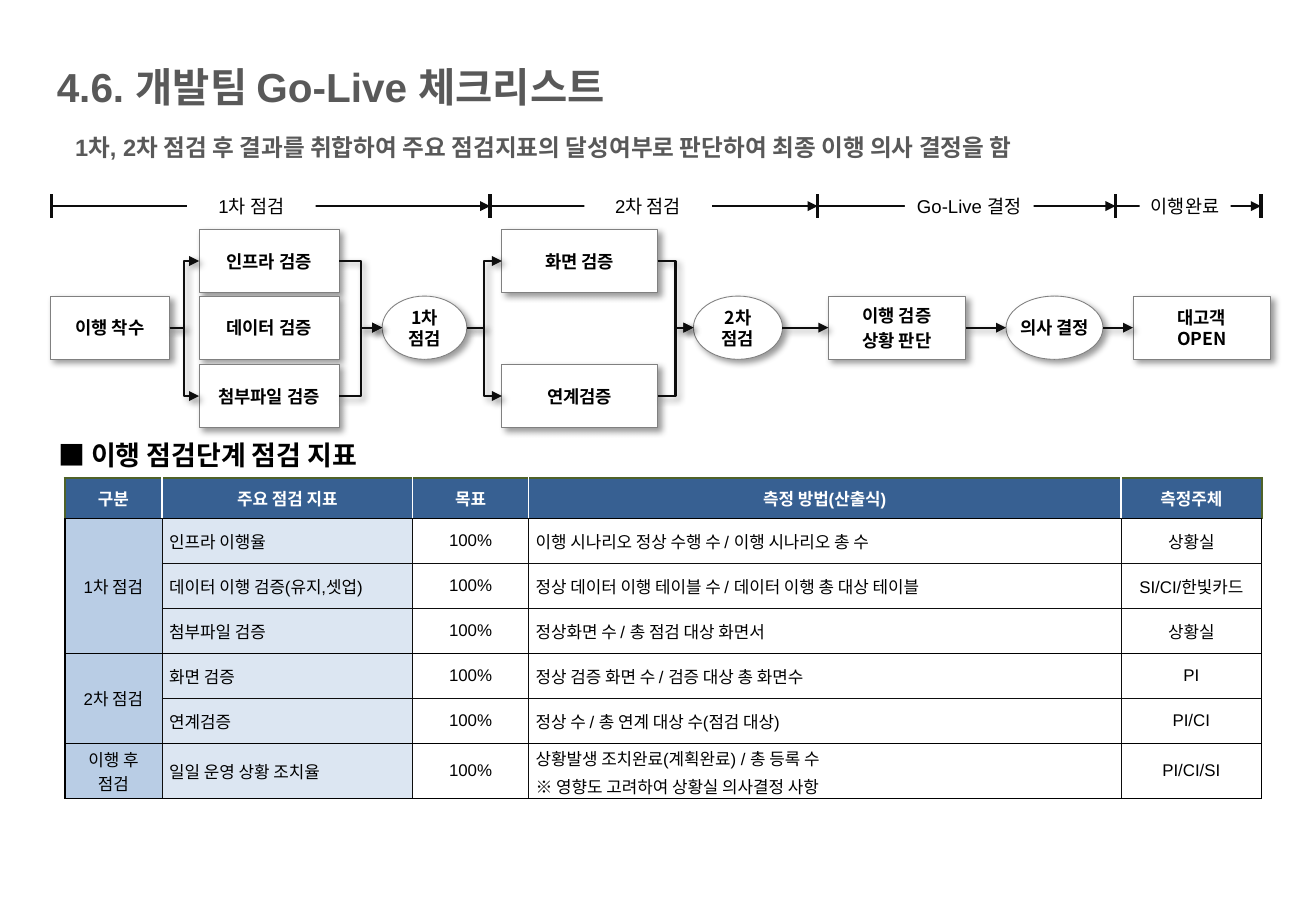
from lxml import etree
from pptx import Presentation
from pptx.dml.color import RGBColor
from pptx.enum.shapes import MSO_CONNECTOR, MSO_SHAPE
from pptx.enum.text import MSO_ANCHOR, PP_ALIGN
from pptx.oxml.ns import qn
from pptx.util import Pt

RECT, OVAL = MSO_SHAPE.RECTANGLE, MSO_SHAPE.OVAL
STRAIGHT, ELBOW = MSO_CONNECTOR.STRAIGHT, MSO_CONNECTOR.ELBOW
LEFT, CENTER, MIDDLE = PP_ALIGN.LEFT, PP_ALIGN.CENTER, MSO_ANCHOR.MIDDLE
LATIN, KOREAN = "Arial", "Noto Sans CJK KR"
BLACK, INK, WHITE, GRAY = "000000", "0D0D0D", "FFFFFF", "595959"

# Content: text, left, top, width, height, size, colour, line spacing
HEADINGS = [
    ("4.6. 개발팀 Go-Live 체크리스트", 26.6, 33.5, 670, 36, 24, GRAY, 1),
    ("1차, 2차 점검 후 결과를 취합하여 주요 점검지표의 달성여부로 판단하여 최종 이행 의사 결정을 함",
     37.4, 75, 711, 24.5, 14, GRAY, 1),
    ("■ 이행 점검단계 점검 지표", 27.4, 252.7, 737, 30, 16, BLACK, 1.2),
]
TICKS = [30.6, 290.5, 484.6, 661.2, 747.4]
PHASES = [("1차 점검", 110.9, 76.3), ("2차 점검", 346.3, 75.6),
          ("Go-Live 결정", 536.4, 76.3), ("이행완료", 675.4, 54)]
AXIS_Y = 122.2

# Flow steps: key -> text, shape, left, width, row
ROW_TOPS, STEP_H = [136, 175.5, 216], 37.5
STEPS = {
    "start": ("이행 착수", RECT, 29.8, 70.8, 1),
    "infra": ("인프라 검증", RECT, 118, 83, 0),
    "data": ("데이터 검증", RECT, 118, 83, 1),
    "files": ("첨부파일 검증", RECT, 118, 83, 2),
    "check1": ("1차\v점검", OVAL, 226.5, 50.2, 1),
    "screen": ("화면 검증", RECT, 297.5, 92.3, 0),
    "link": ("연계검증", RECT, 297.5, 92.3, 2),
    "check2": ("2차\v점검", OVAL, 411, 52.8, 1),
    "review": ("이행 검증\n상황 판단", RECT, 491, 81.4, 1),
    "decide": ("의사 결정", OVAL, 596.3, 57.5, 1),
    "open": ("대고객\vOPEN", RECT, 671.6, 81.4, 1),
}
LINKS = [("start", "infra"), ("start", "files"), ("infra", "check1"), ("files", "check1"),
         ("check1", "screen"), ("check1", "link"), ("screen", "check2"), ("link", "check2"),
         ("check2", "review"), ("review", "decide"), ("decide", "open")]

COLS = [57.6, 148.6, 68.6, 351.2, 83.4]
ROWS = [24, 26.7, 26.7, 26.7, 26.7, 26.7, 32.6]
TABLE = [
    ("구분", "주요 점검 지표", "목표", "측정 방법(산출식)", "측정주체"),
    ("1차 점검", "인프라 이행율", "100%", "이행 시나리오 정상 수행 수 / 이행 시나리오 총 수", "상황실"),
    ("", "데이터 이행 검증(유지,셋업)", "100%",
     "정상 데이터 이행 테이블 수 / 데이터 이행 총 대상 테이블", "SI/CI/한빛카드"),
    ("", "첨부파일 검증", "100%", "정상화면 수 / 총 점검 대상 화면서", "상황실"),
    ("2차 점검", "화면 검증", "100%", "정상 검증 화면 수 / 검증 대상 총 화면수", "PI"),
    ("", "연계검증", "100%", "정상 수 / 총 연계 대상 수(점검 대상)", "PI/CI"),
    ("이행 후 점검", "일일 운영 상황 조치율", "100%",
     "상황발생 조치완료(계획완료) / 총 등록 수\n※ 영향도 고려하여 상황실 의사결정 사항", "PI/CI/SI"),
]
GROUPS = [(1, 3), (4, 5)]
GROUP_EDGES = {1, 4, 6, 7}


def rgb(value):
    return RGBColor.from_string(value)


def write(tf, text, size, color=BLACK, bold=False, align=LEFT, latin=LATIN, spacing=None):
    tf.text = text
    for i, p in enumerate(tf.paragraphs):
        p.alignment = align
        if spacing:
            p.line_spacing = spacing
        if i:
            p.space_before = Pt(2)
        for r in p.runs:
            r.font.size, r.font.bold, r.font.name = Pt(size), bold, latin
            r.font.color.rgb = rgb(color)
            etree.SubElement(r._r.get_or_add_rPr(), qn("a:ea"), typeface=KOREAN)


def set_margins(obj, x, y):
    obj.margin_left = obj.margin_right = Pt(x)
    obj.margin_top = obj.margin_bottom = Pt(y)


def add_shadow(effects):
    shadow = etree.SubElement(effects, qn("a:outerShdw"), blurRad=str(Pt(4)), dist=str(Pt(3)),
                              dir="2700000", algn="tl", rotWithShape="0")
    color = etree.SubElement(shadow, qn("a:srgbClr"), val=BLACK)
    etree.SubElement(color, qn("a:alpha"), val="40000")


def add_box(kind, x, y, w, h):
    sp = s.shapes.add_shape(kind, Pt(x), Pt(y), Pt(w), Pt(h))
    sp.shadow.inherit = False
    sp.fill.solid()
    sp.fill.fore_color.rgb = rgb(WHITE)
    sp.text_frame.vertical_anchor = MIDDLE
    return sp


def add_line(kind, x1, y1, x2, y2, width, arrow=True, shadow=False):
    cx = s.shapes.add_connector(kind, Pt(x1), Pt(y1), Pt(x2), Pt(y2))
    cx.line.color.rgb = rgb(INK)
    cx.line.width = Pt(width)
    if arrow:
        etree.SubElement(cx.line._get_or_add_ln(), qn("a:tailEnd"), type="triangle")
    effects = etree.SubElement(cx._element.spPr, qn("a:effectLst"))
    if shadow:
        add_shadow(effects)
    return cx


def set_borders(cell, edges):
    tcPr = cell._tc.get_or_add_tcPr()
    for i, (side, (color, width)) in enumerate(zip("LRTB", edges)):
        ln = etree.Element(qn("a:ln" + side), w=str(Pt(width)))
        fill = etree.SubElement(ln, qn("a:solidFill"))
        etree.SubElement(fill, qn("a:srgbClr"), val=color)
        tcPr.insert(i, ln)


def cell_edges(row, col):
    """Left, right, top and bottom border of a table cell."""
    first, last = col == 0, col == len(COLS) - 1
    if row == 0:
        olive, white = ("4F6228", 1.5), (WHITE, 1)
        return olive if first else white, olive if last else white, olive, (BLACK, 1)
    thick, thin = (BLACK, 1), (INK, 0.5)
    return (thick if first else thin, thick if last else thin,
            thick if row in GROUP_EDGES else thin, thick if row + 1 in GROUP_EDGES else thin)


prs = Presentation()
prs.slide_width, prs.slide_height = Pt(780), Pt(540)
s = prs.slides.add_slide(prs.slide_layouts[6])

# Headings
for text, x, y, w, h, size, color, spacing in HEADINGS:
    tf = s.shapes.add_textbox(Pt(x), Pt(y), Pt(w), Pt(h)).text_frame
    tf.word_wrap = True
    write(tf, text, size, color, True, spacing=spacing)

# Phase axis
for x in TICKS:
    add_line(STRAIGHT, x, AXIS_Y - 7, x, AXIS_Y + 7, 2, arrow=False)
for x1, x2 in zip(TICKS, TICKS[1:]):
    add_line(STRAIGHT, x1, AXIS_Y, x2, AXIS_Y, 0.75)
for text, x, w in PHASES:
    sp = add_box(RECT, x, AXIS_Y - 10, w, 20)
    sp.line.fill.background()
    set_margins(sp.text_frame, 0, 0)
    write(sp.text_frame, text, 11, align=CENTER)

# Flow steps
boxes = {}
for key, (text, kind, x, w, row) in STEPS.items():
    sp = boxes[key] = add_box(kind, x, ROW_TOPS[row], w, STEP_H)
    sp.line.color.rgb = rgb("808080")
    sp.line.width = Pt(0.5)
    add_shadow(sp._element.spPr.find(qn("a:effectLst")))
    set_margins(sp.text_frame, 1.4, 3.6)
    sp.text_frame.word_wrap = False
    write(sp.text_frame, text, 10.5, bold=True, align=CENTER, latin=KOREAN)

# Flow arrows
for a, b in LINKS:
    _, kind_a, x, w, row_a = STEPS[a]
    _, kind_b, x2, _, row_b = STEPS[b]
    level = row_a == row_b
    cx = add_line(STRAIGHT if level else ELBOW, x + w, ROW_TOPS[row_a] + STEP_H / 2,
                  x2, ROW_TOPS[row_b] + STEP_H / 2, 1.25, shadow=True)
    joined = level or kind_a == kind_b
    if joined and kind_a == RECT:
        cx.begin_connect(boxes[a], 3)
    if joined and kind_b == RECT:
        cx.end_connect(boxes[b], 1)

# Indicator table
table = s.shapes.add_table(len(ROWS), len(COLS), Pt(38.4), Pt(283.4),
                           Pt(sum(COLS)), Pt(sum(ROWS))).table
table.horz_banding = False
for column, width in zip(table.columns, COLS):
    column.width = Pt(width)
for i, (height, texts) in enumerate(zip(ROWS, TABLE)):
    table.rows[i].height = Pt(height)
    for j, text in enumerate(texts):
        cell = table.cell(i, j)
        header = i == 0
        cell.fill.solid()
        cell.fill.fore_color.rgb = rgb("376092" if header else {0: "B9CDE5", 1: "DCE6F2"}.get(j, WHITE))
        cell.vertical_anchor = MIDDLE
        set_margins(cell, 7.2 if header else 0 if j == 4 else 4.3, 3.6 if header else 1.4)
        write(cell.text_frame, text, 10, WHITE if header else BLACK, header,
              LEFT if i and j in (1, 3) else CENTER)
        set_borders(cell, cell_edges(i, j))
for top, bottom in GROUPS:
    table.cell(top, 0).merge(table.cell(bottom, 0))

prs.save("out.pptx")
